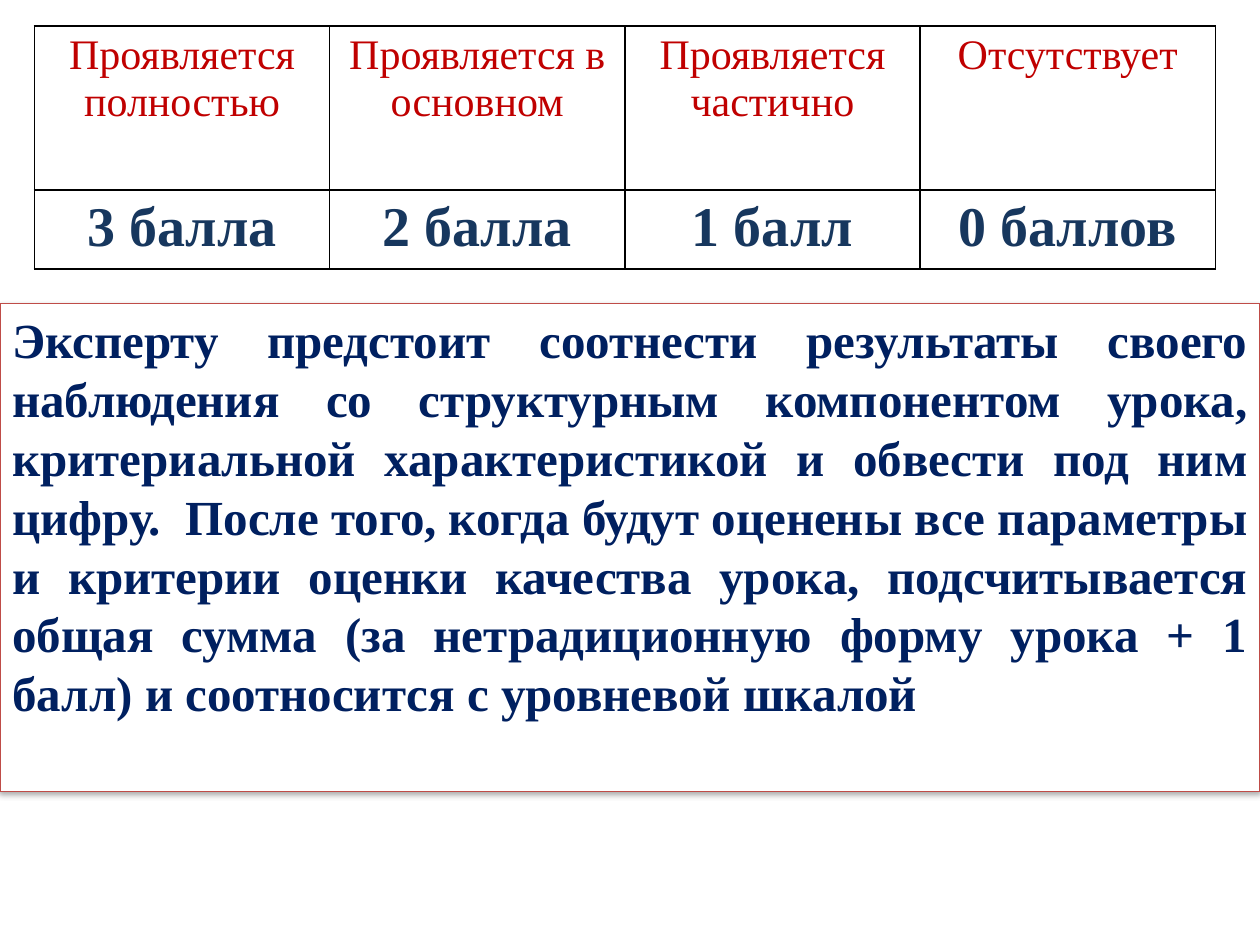
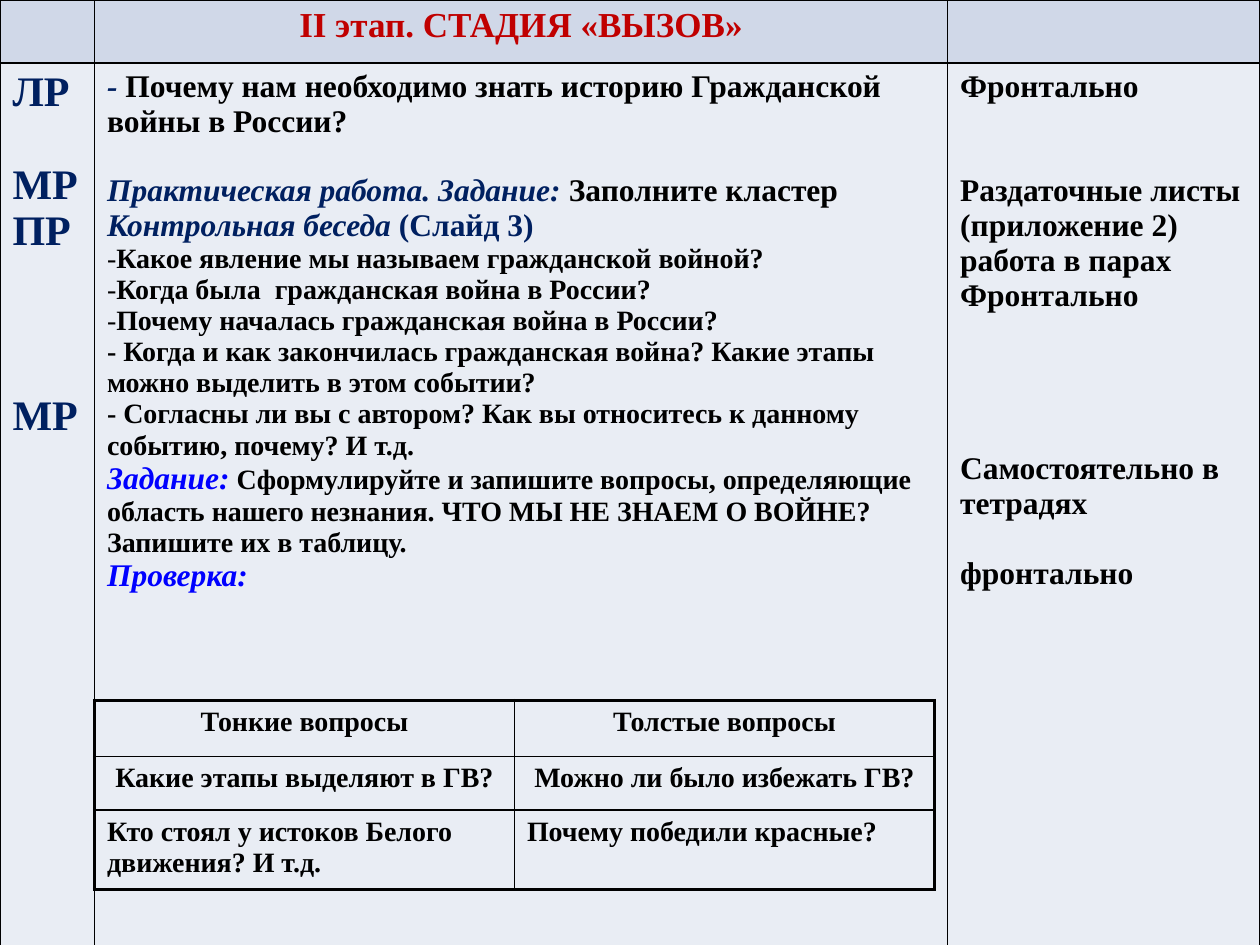
import pptx
import pptx.util
import pptx.dml.color
import pptx.enum.shapes
import pptx.enum.text
import pptx.oxml
import pptx.oxml.ns
from lxml import etree

Pt = pptx.util.Pt
qn = pptx.oxml.ns.qn
ALIGN = pptx.enum.text.PP_ALIGN

# Shared style
FONT = "Times New Roman"
LINE_FACTOR = 1.1  # height of a text line relative to its size
SLIDE_W, SLIDE_H = 720, 540
BLACK, WHITE, RED = "000000", "FFFFFF", "C00000"
NAVY, STEEL, BLUE = "002060", "17375E", "0000FF"
HEAD_FILL, BODY_FILL = "D0D8E8", "E9EDF4"
THIN, THICK = 1, 2.25


def rgb(value):
    return pptx.dml.color.RGBColor.from_string(value)


def run(text, size, color=BLACK, bold=True, italic=False):
    return text, size, color, bold, italic


def para(*runs, skip=0, align=ALIGN.LEFT, dash=False):
    """Describe a paragraph; skip is the free height above it, in points."""
    return runs, skip, align, dash


def lines(count, size):
    return round(count * size * LINE_FACTOR, 1)


def write(tf, paras):
    for i, (runs, skip, align, dash) in enumerate(paras):
        p = tf.paragraphs[0] if i == 0 else tf.add_paragraph()
        p.alignment = align
        p.space_before = Pt(skip)
        if dash:
            pPr = p._p.get_or_add_pPr()
            pPr.set("marL", "0")
            pPr.set("indent", "0")
            etree.SubElement(pPr, qn("a:buFont")).set("typeface", FONT)
            etree.SubElement(pPr, qn("a:buChar")).set("char", "-")
        for text, size, color, bold, italic in runs:
            r = p.add_run()
            r.text = text
            r.font.name = FONT
            r.font.size = Pt(size)
            r.font.bold = bold
            r.font.italic = italic
            r.font.color.rgb = rgb(color)


def set_borders(cell, widths):
    """Draw black borders; widths run left, right, top, bottom."""
    tcPr = cell._tc.get_or_add_tcPr()
    for i, (side, width) in enumerate(zip("LRTB", widths)):
        ln = etree.Element(qn("a:ln" + side), w=str(Pt(width)))
        fill = etree.SubElement(ln, qn("a:solidFill"))
        etree.SubElement(fill, qn("a:srgbClr")).set("val", BLACK)
        tcPr.insert(i, ln)


def add_grid(s, x, y, col_widths, row_heights, cells, fills, frame=THIN):
    """Add a table; fills has one colour (or None) for each row."""
    n_rows, n_cols = len(row_heights), len(col_widths)
    table = s.shapes.add_table(n_rows, n_cols, Pt(x), Pt(y),
                               Pt(sum(col_widths)), Pt(sum(row_heights))).table
    table.first_row = table.horz_banding = False
    for column, width in zip(table.columns, col_widths):
        column.width = Pt(width)
    for i, height in enumerate(row_heights):
        table.rows[i].height = Pt(height)
        for j in range(n_cols):
            cell = table.cell(i, j)
            if fills[i]:
                cell.fill.solid()
                cell.fill.fore_color.rgb = rgb(fills[i])
            else:
                cell.fill.background()
            edges = (j == 0, j == n_cols - 1, i == 0, i == n_rows - 1)
            set_borders(cell, [frame if edge else THIN for edge in edges])
            write(cell.text_frame, cells[i][j])


def add_score_table(s, x, y, w):
    scores = [("Проявляется полностью", "3 балла"),
              ("Проявляется в основном", "2 балла"),
              ("Проявляется частично", "1 балл"),
              ("Отсутствует", "0 баллов")]
    levels = [[para(run(level, 24, RED, bold=False), align=ALIGN.CENTER)]
              for level, _ in scores]
    points = [[para(run(score, 32, STEEL), align=ALIGN.CENTER)]
              for _, score in scores]
    add_grid(s, x, y, [w / len(scores)] * len(scores), [93.6, 45.2],
             [levels, points], [WHITE, WHITE])


def add_instruction(s, x, y, w, h):
    sp = s.shapes.add_shape(pptx.enum.shapes.MSO_SHAPE.RECTANGLE,
                            Pt(x), Pt(y), Pt(w), Pt(h))
    sp.fill.solid()
    sp.fill.fore_color.rgb = rgb(WHITE)
    sp.line.color.rgb = rgb("BF4C48")
    sp.line.width = Pt(0.75)
    # Soft shadow below the box
    sp.shadow.inherit = False
    effects = sp._element.spPr.find(qn("a:effectLst"))
    shadow = etree.SubElement(effects, qn("a:outerShdw"), blurRad=str(Pt(3.1)),
                              dist=str(Pt(1.8)), dir="5400000", rotWithShape="0")
    color = etree.SubElement(shadow, qn("a:srgbClr"), val=BLACK)
    etree.SubElement(color, qn("a:alpha"), val="35000")

    tf = sp.text_frame
    tf.word_wrap = True
    tf.vertical_anchor = pptx.enum.text.MSO_ANCHOR.TOP
    text = ("Эксперту предстоит соотнести результаты своего наблюдения со "
            "структурным компонентом урока, критериальной характеристикой и "
            "обвести под ним цифру.  После того, когда будут оценены все "
            "параметры и критерии оценки качества урока, подсчитывается общая "
            "сумма (за нетрадиционную форму урока + 1 балл) и соотносится с "
            "уровневой шкалой")
    write(tf, [para(run(text, 28, NAVY), align=ALIGN.JUSTIFY)])


def add_stage_table(s, x, y, w, h):
    title = [para(run("II этап. СТАДИЯ «ВЫЗОВ»", 20, RED),
                  align=ALIGN.CENTER)]
    # Kinds of results
    results = [para(run(text, 24, NAVY), skip=lines(blank, 24))
               for text, blank in [("ЛР", 0), ("МР", 1), ("ПР", 0), ("МР", 3)]]
    # Course of the lesson
    questions = ["Какое явление мы называем гражданской войной?",
                 "Когда была  гражданская война в России?",
                 "Почему началась гражданская война в России?"]
    discussion = ["- Когда и как закончилась гражданская война? Какие этапы "
                  "можно выделить в этом событии?",
                  "- Согласны ли вы с автором? Как вы относитесь к данному "
                  "событию, почему? И т.д."]
    course = [
        para(run("- ", 18, NAVY, italic=True),
             run("Почему нам необходимо знать историю Гражданской войны в "
                 "России?", 18)),
        para(run("Практическая работа. Задание: ", 18, NAVY, italic=True),
             run("Заполните кластер", 18), skip=lines(1, 18)),
        para(run("Контрольная беседа", 18, NAVY, italic=True),
             run(" (Слайд 3)", 18, NAVY)),
        *[para(run(text, 16), dash=True) for text in questions],
        *[para(run(text, 16)) for text in discussion],
        para(run("Задание:", 18, BLUE, italic=True),
             run(" Сформулируйте и запишите вопросы, определяющие область "
                 "нашего незнания. ЧТО МЫ НЕ ЗНАЕМ О ВОЙНЕ?", 16)),
        para(run("Запишите их в таблицу.", 16)),
        para(run("Проверка:", 18, BLUE, italic=True)),
    ]
    # Forms of work
    forms = [para(run(text, 18), skip=lines(blank, 18)) for text, blank in [
        ("Фронтально", 0),
        ("Раздаточные листы (приложение 2) работа в парах", 2),
        ("Фронтально", 0),
        ("Самостоятельно в тетрадях", 4),
        ("фронтально", 1)]]
    side, head = 54, 36
    right = 178.5
    add_grid(s, x, y, [side, w - side - right, right], [head, h - head],
             [[[], title, []], [results, course, forms]],
             [HEAD_FILL, BODY_FILL])


def add_question_table(s, x, y, w):
    rows = [("Тонкие вопросы", "Толстые вопросы", ALIGN.CENTER),
            ("Какие этапы выделяют в ГВ?", "Можно ли было избежать ГВ?",
             ALIGN.CENTER),
            ("Кто стоял у истоков Белого движения? И т.д.",
             "Почему победили красные?", ALIGN.LEFT)]
    cells = [[[para(run(text, 16), align=align)] for text in texts]
             for *texts, align in rows]
    add_grid(s, x, y, [w / 2] * 2, [32, 30.6, 45.4], cells,
             [None] * len(rows), frame=THICK)


def main():
    prs = pptx.Presentation()
    prs.slide_width, prs.slide_height = Pt(SLIDE_W), Pt(SLIDE_H)
    blank = prs.slide_layouts[6]

    # Scoring scale
    s = prs.slides.add_slide(blank)
    add_score_table(s, 19.7, 15, 674.8)
    add_instruction(s, 0, 173.5, SLIDE_W, 278.7)

    # Lesson stage
    s = prs.slides.add_slide(blank)
    add_stage_table(s, 0, 0, SLIDE_W, 561.6)
    add_question_table(s, 54, 400.3, 480)

    prs.save("out.pptx")


if __name__ == "__main__":
    main()
